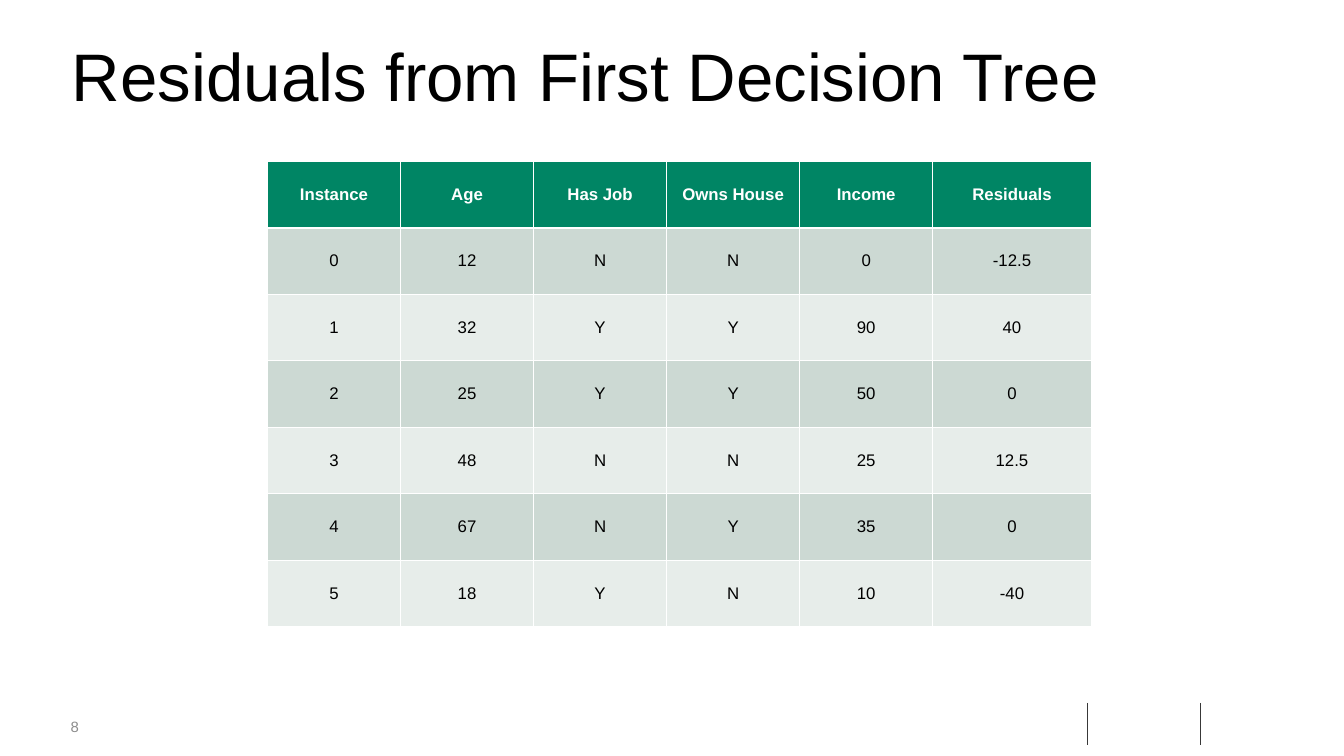
from lxml import etree
from pptx import Presentation
from pptx.dml.color import RGBColor
from pptx.enum.shapes import MSO_CONNECTOR
from pptx.enum.text import MSO_ANCHOR, MSO_AUTO_SIZE, PP_ALIGN
from pptx.oxml.ns import qn
from pptx.util import Inches, Pt

CENTER, LEFT = PP_ALIGN.CENTER, PP_ALIGN.LEFT
MIDDLE, TOP = MSO_ANCHOR.MIDDLE, MSO_ANCHOR.TOP
STRAIGHT = MSO_CONNECTOR.STRAIGHT

# Content
TITLE = "Residuals from First Decision Tree"
PAGE_NUMBER = "8"
HEADER = ["Instance", "Age", "Has Job", "Owns House", "Income", "Residuals"]
RECORDS = [
    [0, 12, "N", "N", 0, -12.5],
    [1, 32, "Y", "Y", 90, 40],
    [2, 25, "Y", "Y", 50, 0],
    [3, 48, "N", "N", 25, 12.5],
    [4, 67, "N", "Y", 35, 0],
    [5, 18, "Y", "N", 10, -40],
]

# Design
COLORS = {
    "text": "000000", "header": "008564", "white": "FFFFFF",
    "band_dark": "CCD9D3", "band_light": "E7EDEA",
    "rule": "383838", "number": "8C8C8C",
}
FONT = "Arial"
SLIDE_WIDTH, SLIDE_HEIGHT = 20, 11.25
TABLE_LEFT, TABLE_TOP = 3.98, 2.4
COLUMN_WIDTHS = [1.98] * 5 + [2.36]
ROW_HEIGHT = 0.99
RULE_TOP, RULE_BOTTOM = 10.46, 11.09
RULE_POSITIONS = [16.18, 17.86]


def color(name):
    return RGBColor.from_string(COLORS[name])


def write_text(text_frame, text, *, size, fill="text", bold=False, align=LEFT,
               line_spacing=None):
    paragraph = text_frame.paragraphs[0]
    paragraph.alignment = align
    paragraph.line_spacing = line_spacing
    run = paragraph.add_run()
    run.text = text
    run.font.name = FONT
    run.font.size = Pt(size)
    run.font.bold = bold
    run.font.color.rgb = color(fill)


def set_borders(cell, bottom_width):
    properties = cell._tc.get_or_add_tcPr()
    widths = {"lnL": 1, "lnR": 1, "lnT": 1, "lnB": bottom_width}
    for position, (side, width) in enumerate(widths.items()):
        line = etree.Element(qn(f"a:{side}"), w=str(Pt(width)))
        fill = etree.SubElement(line, qn("a:solidFill"))
        etree.SubElement(fill, qn("a:srgbClr"), val=COLORS["white"])
        properties.insert(position, line)


def add_title(slide):
    title = slide.shapes.title
    title.left, title.top = Inches(0.97), Inches(0.6)
    title.width, title.height = Inches(17.49), Inches(1.83)
    title.text_frame.word_wrap = True
    title.text_frame.auto_size = MSO_AUTO_SIZE.NONE
    title.text_frame.vertical_anchor = TOP
    write_text(title.text_frame, TITLE, size=72, line_spacing=0.9)


def add_residuals_table(slide):
    rows = [HEADER] + RECORDS
    table = slide.shapes.add_table(
        len(rows), len(HEADER), Inches(TABLE_LEFT), Inches(TABLE_TOP),
        Inches(sum(COLUMN_WIDTHS)), Inches(ROW_HEIGHT * len(rows))).table
    for column, width in zip(table.columns, COLUMN_WIDTHS):
        column.width = Inches(width)
    for row_index, values in enumerate(rows):
        table.rows[row_index].height = Inches(ROW_HEIGHT)
        is_header = row_index == 0
        band = "band_dark" if row_index % 2 else "band_light"
        for column_index, value in enumerate(values):
            cell = table.cell(row_index, column_index)
            cell.vertical_anchor = MIDDLE
            cell.fill.solid()
            cell.fill.fore_color.rgb = color("header" if is_header else band)
            set_borders(cell, bottom_width=3 if is_header else 1)
            write_text(cell.text_frame, str(value), size=18, bold=is_header,
                       fill="white" if is_header else "text", align=CENTER)


def add_footer(slide):
    for x in RULE_POSITIONS:
        rule = slide.shapes.add_connector(
            STRAIGHT, Inches(x), Inches(RULE_TOP), Inches(x), Inches(RULE_BOTTOM))
        rule.line.color.rgb = color("rule")
        rule.line.width = Pt(1)
        etree.SubElement(rule._element.spPr, qn("a:effectLst"))

    number = slide.shapes.add_textbox(
        Inches(1.05), Inches(10.68), Inches(0.59), Inches(0.27))
    frame = number.text_frame
    frame.margin_left = frame.margin_right = frame.margin_top = frame.margin_bottom = 0
    frame.word_wrap = True
    frame.vertical_anchor = MIDDLE
    write_text(frame, PAGE_NUMBER, size=16, fill="number")


def main():
    presentation = Presentation()
    presentation.slide_width = Inches(SLIDE_WIDTH)
    presentation.slide_height = Inches(SLIDE_HEIGHT)
    slide = presentation.slides.add_slide(presentation.slide_layouts.get_by_name("Title Only"))
    add_footer(slide)
    add_title(slide)
    add_residuals_table(slide)
    presentation.save("out.pptx")


if __name__ == "__main__":
    main()
